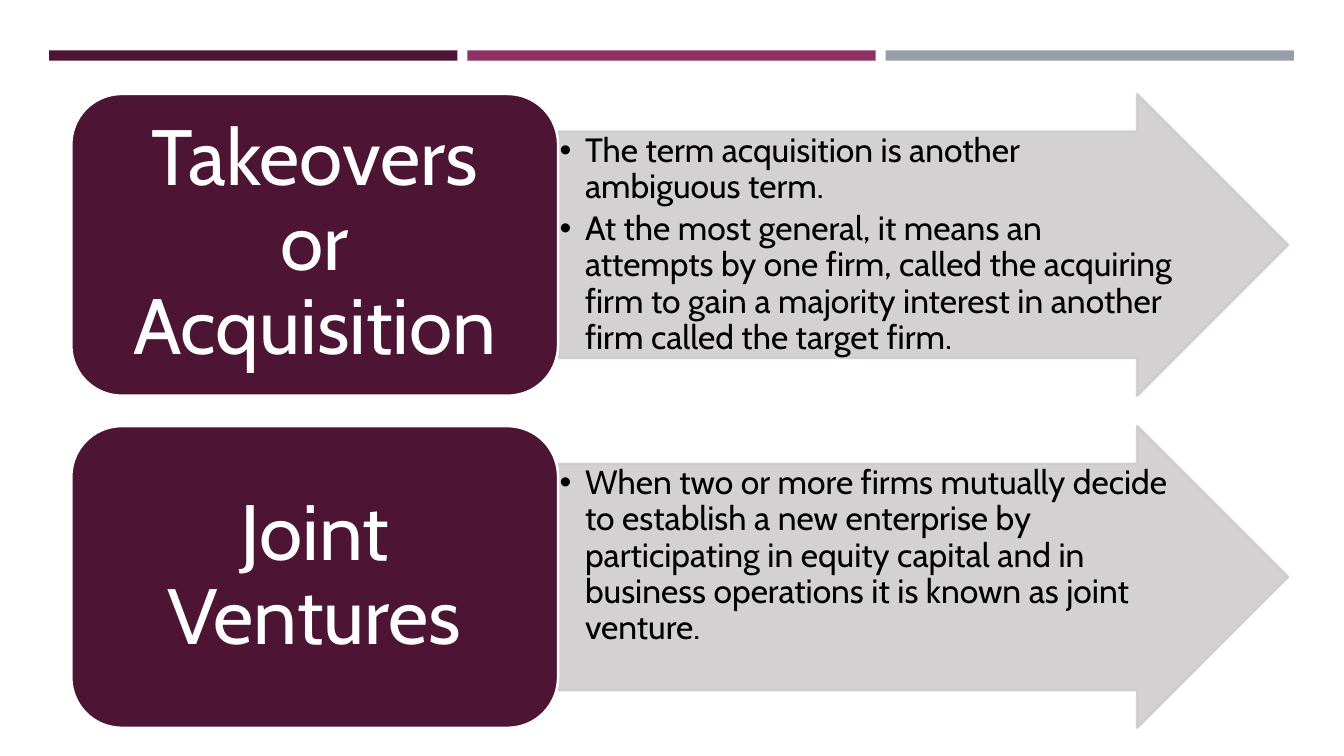
import lxml.etree
import pptx
import pptx.dml.color
import pptx.enum.shapes
import pptx.enum.text
import pptx.oxml.ns
import pptx.util

Cm = pptx.util.Cm
Pt = pptx.util.Pt
SHAPE = pptx.enum.shapes.MSO_SHAPE
ALIGN = pptx.enum.text.PP_ALIGN
ANCHOR = pptx.enum.text.MSO_ANCHOR
qn = pptx.oxml.ns.qn

FONT = "Cabin"
COLOURS = {
    "plum": "4D1434",
    "magenta": "903163",
    "slate": "969FA7",
    "arrow": "D0CCCE",
    "white": "FFFFFF",
    "black": "000000",
}
TOPICS = [
    ("Takeovers or Acquisition", [
        "The term acquisition is another ambiguous term.",
        "At the most general, it means an attempts by one firm, called the acquiring "
        "firm to gain a majority interest in another firm called the target firm.",
    ]),
    ("Joint Ventures", [
        "When two or more firms mutually decide to establish a new enterprise by "
        "participating in equity capital and in business operations it is known as "
        "joint venture.",
    ]),
]


def colour(name):
    """Return the named palette colour."""
    return pptx.dml.color.RGBColor.from_string(COLOURS[name])


def add_block(slide, kind, box, fill, line=None):
    """Add a flat preset shape with an optional outline."""
    shape = slide.shapes.add_shape(kind, *box)
    shape.shadow.inherit = False
    shape.fill.solid()
    shape.fill.fore_color.rgb = colour(fill)
    if line:
        shape.line.color.rgb = colour(line)
        shape.line.width = Pt(1.75)
    else:
        shape.line.fill.background()
    return shape


def set_opacity(shape, percent):
    """Make the fill and outline of a shape partly transparent."""
    for element in shape.element.spPr.iter(qn("a:srgbClr")):
        lxml.etree.SubElement(element, qn("a:alpha")).set("val", str(percent * 1000))


def add_bullet(paragraph):
    """Give a paragraph a round bullet with a hanging indent."""
    properties = paragraph._p.get_or_add_pPr()
    properties.set("marL", str(Cm(0.64)))
    properties.set("indent", str(-Cm(0.64)))
    lxml.etree.SubElement(properties, qn("a:buFont")).set("typeface", "Arial")
    lxml.etree.SubElement(properties, qn("a:buChar")).set("char", "•")


def write_text(shape, texts, size, ink, align, anchor, margins, space_after):
    """Fill a shape with paragraphs of one style and return them."""
    frame = shape.text_frame
    frame.word_wrap = True
    frame.vertical_anchor = anchor
    frame.margin_left = frame.margin_right = margins[0]
    frame.margin_top = frame.margin_bottom = margins[1]
    frame.text = "\n".join(texts)
    for paragraph in frame.paragraphs:
        paragraph.alignment = align
        paragraph.line_spacing = 0.9
        paragraph.space_after = space_after
        paragraph.font.name = FONT
        paragraph.font.size = size
        paragraph.font.color.rgb = colour(ink)
    return frame.paragraphs


def add_top_bars(slide, left, top, width, height):
    """Draw the three coloured bars across the given box."""
    names = ["plum", "magenta", "slate"]
    gap = Cm(0.25)
    bar_width = (width - gap * (len(names) - 1)) // len(names)
    for index, name in enumerate(names):
        bar_left = left + index * (bar_width + gap)
        add_block(slide, SHAPE.RECTANGLE, (bar_left, top, bar_width, height), name)


def add_topic(slide, left, top, width, height, heading, points):
    """Draw a heading box and the arrow that holds its points."""
    heading_width = int(width * 0.4)
    arrow_box = (left + heading_width, top, width - heading_width, height)
    arrow = add_block(slide, SHAPE.RIGHT_ARROW, arrow_box, "arrow", "arrow")
    arrow.adjustments[0] = 0.75
    arrow.adjustments[1] = 0.5
    set_opacity(arrow, 90)
    for paragraph in write_text(arrow, points, Pt(24), "black", ALIGN.LEFT,
                                ANCHOR.TOP, (Cm(0.04), Cm(0.04)), Pt(4)):
        add_bullet(paragraph)

    heading_box = (left, top, heading_width, height)
    label = add_block(slide, SHAPE.ROUNDED_RECTANGLE, heading_box, "plum", "white")
    write_text(label, [heading], Pt(56), "white", ALIGN.CENTER,
               ANCHOR.MIDDLE, (Cm(0.59), Cm(0.3)), Pt(20))


def main():
    """Build the slide and save it."""
    presentation = pptx.Presentation()
    presentation.slide_width = Cm(33.87)
    presentation.slide_height = Cm(19.05)
    slide = presentation.slides.add_slide(presentation.slide_layouts[6])
    add_top_bars(slide, Cm(1.24), Cm(1.27), Cm(31.37), Cm(0.26))
    for index, (heading, points) in enumerate(TOPICS):
        top = Cm(2.37) + index * Cm(8.37)
        add_topic(slide, Cm(1.8), top, Cm(30.66), Cm(7.6), heading, points)
    presentation.save("out.pptx")


if __name__ == "__main__":
    main()
